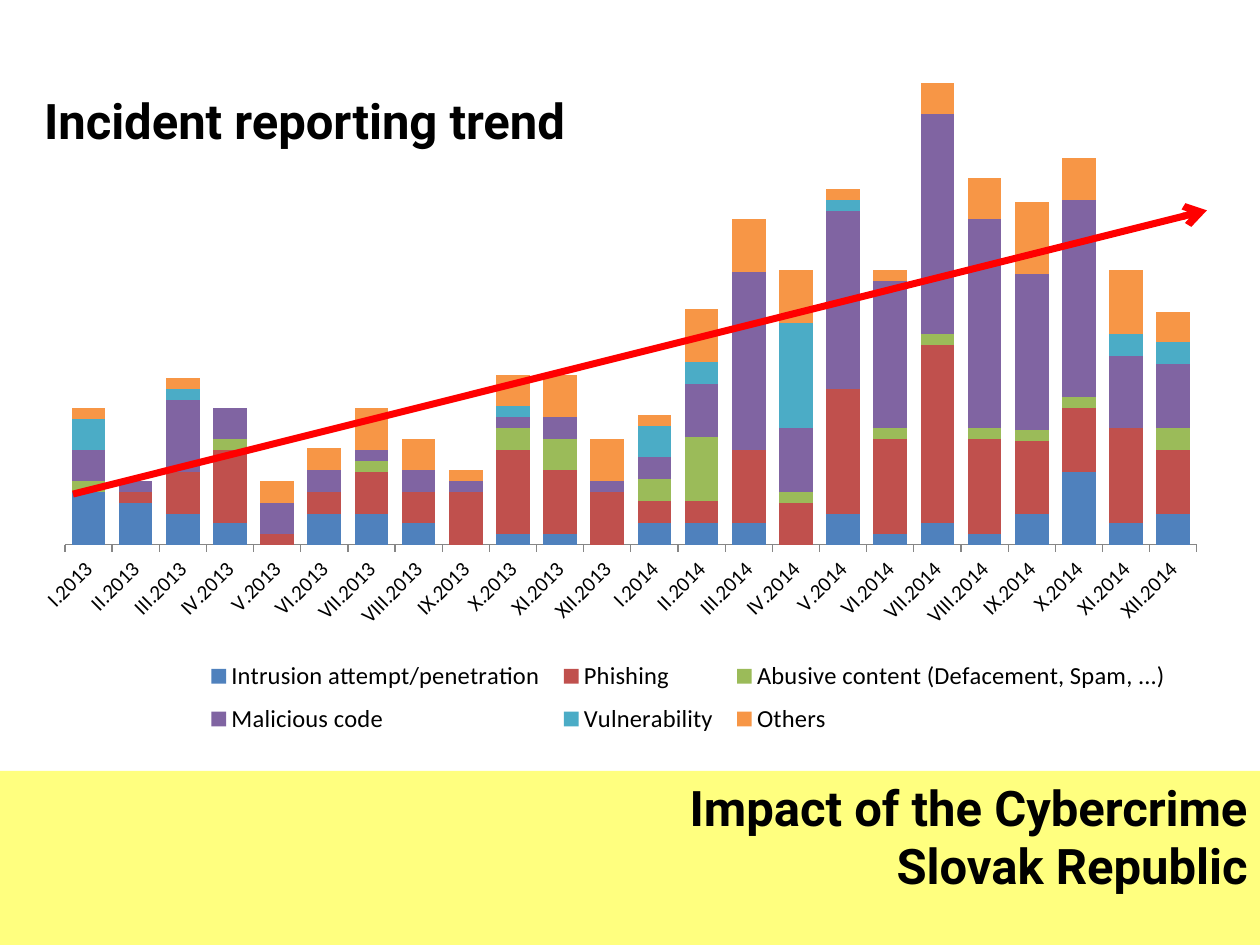
from typing import NamedTuple

from lxml.etree import SubElement
from pptx import Presentation
from pptx.chart.data import CategoryChartData
from pptx.dml.color import RGBColor
from pptx.enum.chart import XL_CHART_TYPE, XL_LEGEND_POSITION, XL_TICK_MARK
from pptx.enum.shapes import MSO_CONNECTOR, MSO_SHAPE
from pptx.enum.text import MSO_ANCHOR, PP_ALIGN
from pptx.oxml import parse_xml
from pptx.oxml.ns import nsdecls, qn
from pptx.util import Cm, Pt


class Box(NamedTuple):
    left: float
    top: float
    width: float
    height: float

    def lengths(self) -> list:
        return [Cm(value) for value in self]


class IncidentType(NamedTuple):
    name: str
    color: str
    values: list[int]


MONTHS = ["I", "II", "III", "IV", "V", "VI", "VII", "VIII", "IX", "X", "XI", "XII"]
CATEGORIES = [f"{month}.{year}" for year in (2013, 2014) for month in MONTHS]

INCIDENT_TYPES = [
    IncidentType("Intrusion attempt/penetration", "4F81BD",
                 [24, 19, 14, 10, 0, 14, 14, 10, 0, 5, 5, 0,
                  10, 10, 10, 0, 14, 5, 10, 5, 14, 33, 10, 14]),
    IncidentType("Phishing", "C0504D",
                 [0, 5, 19, 33, 5, 10, 19, 14, 24, 38, 29, 24,
                  10, 10, 33, 19, 57, 43, 81, 43, 33, 29, 43, 29]),
    IncidentType("Abusive content (Defacement, Spam, ...)", "9BBB59",
                 [5, 0, 0, 5, 0, 0, 5, 0, 0, 10, 14, 0,
                  10, 29, 0, 5, 0, 5, 5, 5, 5, 5, 0, 10]),
    IncidentType("Malicious code", "8064A2",
                 [14, 5, 33, 14, 14, 10, 5, 10, 5, 5, 10, 5,
                  10, 24, 81, 29, 81, 67, 100, 95, 71, 90, 33, 29]),
    IncidentType("Vulnerability", "4BACC6",
                 [14, 0, 5, 0, 0, 0, 0, 0, 0, 5, 0, 0,
                  14, 10, 0, 48, 5, 0, 0, 0, 0, 0, 10, 10]),
    IncidentType("Others", "F79646",
                 [5, 0, 5, 0, 10, 10, 19, 14, 5, 14, 19, 19,
                  5, 24, 24, 24, 5, 5, 14, 19, 33, 19, 29, 14]),
]

HEADING_FONT = {"name": "Roboto", "size": Pt(28), "bold": True}
CHART_FONT = {"name": "Calibri", "size": Pt(10)}
CHART_BOX = Box(0.84, 0, 23.6, 16.94)
# Both boxes are measured from the chart's top left corner.
PLOT_BOX = Box(0.47, 0.44, 22.82, 10.54)
LEGEND_BOX = Box(3.1, 13.08, 19.88, 1.97)


def paint(color_format, color: str) -> None:
    color_format.rgb = RGBColor.from_string(color)


def set_attributes(target, values: dict) -> None:
    for name, value in values.items():
        setattr(target, name, value)


def write_heading(shape, lines: list[str], alignment) -> None:
    frame = shape.text_frame
    set_attributes(frame, {"word_wrap": True, "vertical_anchor": MSO_ANCHOR.TOP})
    for index, line in enumerate(lines):
        paragraph = frame.add_paragraph() if index else frame.paragraphs[0]
        paragraph.alignment = alignment
        run = paragraph.add_run()
        run.text = line
        set_attributes(run.font, HEADING_FONT)
        paint(run.font.color, "000000")


def add_banner(slide, box: Box, lines: list[str]) -> None:
    banner = slide.shapes.add_shape(MSO_SHAPE.RECTANGLE, *box.lengths())
    banner.shadow.inherit = False
    banner.fill.solid()
    paint(banner.fill.fore_color, "FFFF00")
    banner.line.fill.background()
    color = next(banner.element.spPr.iter(qn("a:srgbClr")))
    SubElement(color, qn("a:alpha"), val="50000")
    write_heading(banner, lines, PP_ALIGN.RIGHT)


def place_chart_part(part, box: Box, position: int, modes: dict) -> None:
    """Give a plot area or legend a fixed place inside the chart."""
    for old_layout in part.findall(qn("c:layout")):
        part.remove(old_layout)
    layout = parse_xml(f"<c:layout {nsdecls('c')}><c:manualLayout/></c:layout>")
    shares = {"x": box.left / CHART_BOX.width, "y": box.top / CHART_BOX.height,
              "w": box.width / CHART_BOX.width, "h": box.height / CHART_BOX.height}
    for name, value in (modes | {"xMode": "edge", "yMode": "edge"} | shares).items():
        SubElement(layout[0], qn(f"c:{name}"), val=str(value))
    part.insert(position, layout)


def clear_chart_background(chart) -> None:
    chart.element.find(qn("c:chart")).addnext(parse_xml(
        f"<c:spPr {nsdecls('c', 'a')}><a:noFill/><a:ln><a:noFill/></a:ln></c:spPr>"))


def add_incident_chart(slide) -> None:
    data = CategoryChartData()
    data.categories = CATEGORIES
    for incident_type in INCIDENT_TYPES:
        data.add_series(incident_type.name, incident_type.values)
    chart = slide.shapes.add_chart(
        XL_CHART_TYPE.COLUMN_STACKED, *CHART_BOX.lengths(), data).chart
    set_attributes(chart.font, CHART_FONT)
    paint(chart.font.color, "000000")
    set_attributes(chart, {"has_title": False, "has_legend": True})
    set_attributes(chart.legend, {"position": XL_LEGEND_POSITION.BOTTOM,
                                  "include_in_layout": False})
    set_attributes(chart.legend.font, CHART_FONT | {"size": Pt(14)})
    set_attributes(chart.value_axis, {"visible": False, "has_major_gridlines": False,
                                      "minimum_scale": 0, "maximum_scale": 238})
    category_axis = chart.category_axis
    category_axis.major_tick_mark = XL_TICK_MARK.OUTSIDE
    set_attributes(category_axis.tick_labels.font, CHART_FONT | {"size": Pt(12)})
    paint(category_axis.format.line.color, "868686")
    plot = chart.plots[0]
    set_attributes(plot, {"gap_width": 40, "overlap": 100, "vary_by_categories": False})
    for series, incident_type in zip(plot.series, INCIDENT_TYPES):
        series.format.fill.solid()
        paint(series.format.fill.fore_color, incident_type.color)
    plot_area = next(chart.element.iter(qn("c:plotArea")))
    legend = next(chart.element.iter(qn("c:legend")))
    place_chart_part(plot_area, PLOT_BOX, 0, {"layoutTarget": "inner"})
    place_chart_part(legend, LEGEND_BOX, 1, {})
    clear_chart_background(chart)


def add_trend_arrow(slide, start: tuple[float, float], end: tuple[float, float]) -> None:
    arrow = slide.shapes.add_connector(
        MSO_CONNECTOR.STRAIGHT, *[Cm(value) for value in start + end])
    paint(arrow.line.color, "FF0000")
    arrow.line.width = Pt(4)
    properties = arrow.element.spPr
    SubElement(properties.find(qn("a:ln")), qn("a:tailEnd"), type="arrow")
    SubElement(properties, qn("a:effectLst"))


def main() -> None:
    presentation = Presentation()
    set_attributes(presentation, {"slide_width": Cm(25.4), "slide_height": Cm(19.05)})
    slide = presentation.slides.add_slide(presentation.slide_layouts[6])
    add_banner(slide, Box(0, 15.54, 25.4, 3.51),
               ["Impact of the Cybercrime", "Slovak Republic"])
    add_incident_chart(slide)
    add_trend_arrow(slide, (1.47, 9.96), (24.33, 4.24))
    title = slide.shapes.add_textbox(*Box(0.64, 1.7, 15.24, 1.45).lengths())
    write_heading(title, ["Incident reporting trend"], PP_ALIGN.LEFT)
    presentation.save("out.pptx")


if __name__ == "__main__":
    main()
